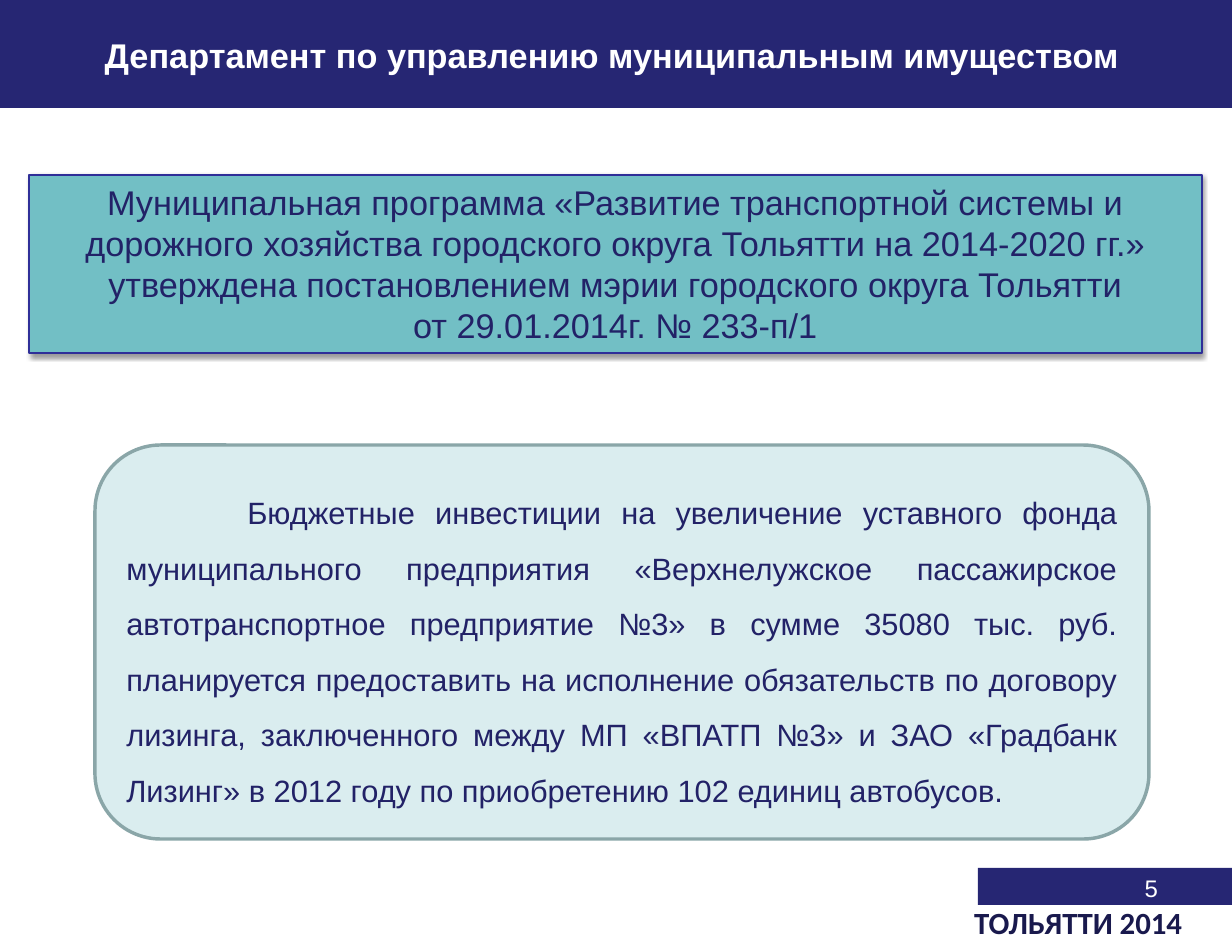
from lxml import etree
from pptx import Presentation
from pptx.dml.color import RGBColor
from pptx.enum import shapes, text
from pptx.oxml import ns
from pptx.util import Emu, Pt

SCALE = 914400 / 123.2
COLORS = {
    "navy": "262673",
    "ink": "222267",
    "footer": "19194D",
    "white": "FFFFFF",
    "teal": "72BFC5",
    "teal_edge": "2F2F98",
    "pale": "DAEDEF",
    "pale_edge": "8AA6A8",
    "shadow": "000000",
}
PROGRAM = [
    "Муниципальная программа «Развитие транспортной системы и дорожного хозяйства "
    "городского округа Тольятти на 2014-2020 гг.» утверждена постановлением мэрии "
    "городского округа Тольятти",
    "от 29.01.2014г. № 233-п/1",
]
INVESTMENT = (
    "Бюджетные инвестиции на увеличение уставного фонда муниципального предприятия "
    "«Верхнелужское пассажирское автотранспортное предприятие №3» в сумме 35080 тыс. руб. "
    "планируется предоставить на исполнение обязательств по договору лизинга, заключенного "
    "между МП «ВПАТП №3» и ЗАО «Градбанк Лизинг» в 2012 году по приобретению 102 единиц автобусов."
)


def px(value):
    """Turn pixels into EMU."""
    return Emu(round(value * SCALE))


def color(name):
    """Return a named colour."""
    return RGBColor.from_string(COLORS[name])


def add_panel(page, box, fill, edge=None, width=1, kind=shapes.MSO_SHAPE.RECTANGLE):
    """Add a filled shape with an optional outline."""
    panel = page.shapes.add_shape(kind, *map(px, box))
    panel.shadow.inherit = False
    panel.fill.solid()
    panel.fill.fore_color.rgb = color(fill)
    if edge:
        panel.line.color.rgb = color(edge)
        panel.line.width = Pt(width)
    else:
        panel.line.fill.background()
    return panel


def write(shape, lines, size, ink, align, font="Arial", bold=False, spacing=None,
          anchor=text.MSO_ANCHOR.TOP):
    """Fill a shape with paragraphs of one style."""
    frame = shape.text_frame
    frame.word_wrap = True
    frame.vertical_anchor = anchor
    frame.text = "\n".join(lines)
    for paragraph in frame.paragraphs:
        paragraph.alignment = align
        paragraph.line_spacing = spacing
        for span in paragraph.runs:
            span.font.name = font
            span.font.size = Pt(size)
            span.font.bold = bold
            span.font.color.rgb = color(ink)
    return frame


def add_drop_shadow(shape):
    """Give a shape a soft shadow straight below it."""
    effects = shape._element.spPr.find(ns.qn("a:effectLst"))
    shadow = etree.SubElement(
        effects, ns.qn("a:outerShdw"), blurRad=str(Pt(3.1)), dist=str(Pt(1.6)),
        dir="5400000", rotWithShape="0")
    tint = etree.SubElement(shadow, ns.qn("a:srgbClr"), val=COLORS["shadow"])
    etree.SubElement(tint, ns.qn("a:alpha"), val="38000")


def add_header(page, box):
    """Add the title band."""
    band = add_panel(page, box, "navy")
    frame = write(band, ["Департамент по управлению муниципальным имуществом"], 20, "white",
                  text.PP_ALIGN.CENTER, bold=True, spacing=0.8, anchor=text.MSO_ANCHOR.MIDDLE)
    frame.margin_left, frame.margin_right = px(4), px(12)
    frame.margin_top, frame.margin_bottom = px(15), px(6)


def add_program(page, box):
    """Add the shadowed programme panel."""
    panel = add_panel(page, box, "teal", "teal_edge", 0.75)
    add_drop_shadow(panel)
    write(panel, PROGRAM, 20, "ink", text.PP_ALIGN.CENTER)


def add_investment(page, box):
    """Add the rounded investment panel."""
    panel = add_panel(page, box, "pale", "pale_edge", 2, shapes.MSO_SHAPE.ROUNDED_RECTANGLE)
    frame = write(panel, [INVESTMENT], 18, "ink", text.PP_ALIGN.JUSTIFY, spacing=1.5,
                  anchor=text.MSO_ANCHOR.MIDDLE)
    properties = frame.paragraphs[0]._p.get_or_add_pPr()
    properties.set("marL", "0")
    properties.set("indent", str(px(121)))


def add_footer(page, box):
    """Add the page number band and the city line under it."""
    left, top, width, height = box
    add_panel(page, (left, top, width, 37), "navy")
    number = page.shapes.add_textbox(px(left - 95), px(top - 1), px(287), px(66))
    write(number, ["5"], 14, "white", text.PP_ALIGN.RIGHT)
    city = page.shapes.add_textbox(px(left - 16), px(top + 37), px(width + 18), px(height - 37))
    write(city, ["ТОЛЬЯТТИ 2014"], 18, "footer", text.PP_ALIGN.LEFT, "Calibri", True, 0.8)


def main():
    """Build and save the deck."""
    deck = Presentation()
    deck.slide_width, deck.slide_height = px(1232), px(951)
    page = deck.slides.add_slide(deck.slide_layouts[6])
    add_header(page, (0, 0, 1232, 108))
    add_program(page, (29, 175, 1173, 178))
    add_investment(page, (95, 445, 1054, 394))
    add_footer(page, (978, 868, 254, 80))
    deck.save("out.pptx")


if __name__ == "__main__":
    main()
